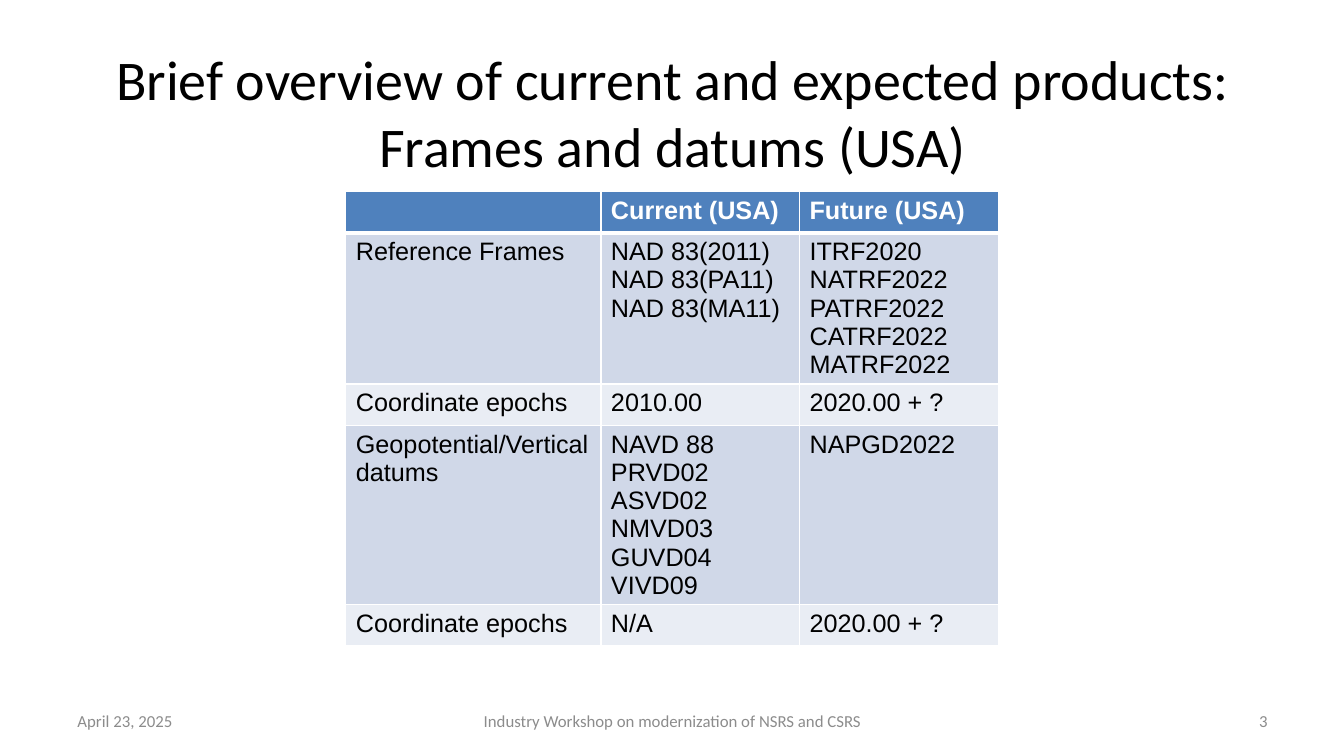
"""Build the slide on current and future reference frames and datums of the USA."""
import pptx
import pptx.dml.color
import pptx.enum.text
import pptx.oxml
import pptx.oxml.ns
import pptx.util
from pptx.util import Inches

ALIGN = pptx.enum.text.PP_ALIGN
MIDDLE = pptx.enum.text.MSO_ANCHOR.MIDDLE

TITLE = "Brief overview of current and expected products: Frames and datums (USA)"
PRODUCTS = [
    ("", "Current (USA)", "Future (USA)"),
    ("Reference Frames", "NAD 83(2011)\nNAD 83(PA11)\nNAD 83(MA11)",
     "ITRF2020\nNATRF2022\nPATRF2022\nCATRF2022\nMATRF2022"),
    ("Coordinate epochs", "2010.00", "2020.00 + ?"),
    ("Geopotential/Vertical datums",
     "NAVD 88\nPRVD02\nASVD02\nNMVD03\nGUVD04\nVIVD09", "NAPGD2022"),
    ("Coordinate epochs", "N/A", "2020.00 + ?"),
]
FOOTERS = [
    ("April 23, 2025", 0.67, 3.11, ALIGN.LEFT),
    ("Industry Workshop on modernization of NSRS and CSRS", 4.56, 4.22, ALIGN.CENTER),
    ("3", 9.56, 3.11, ALIGN.RIGHT),
]
COLUMN_WIDTHS = [2.53, 1.97, 1.97]
LINE_HEIGHT, CELL_MARGINS, MIN_ROW = 0.28, 0.1, 0.41
HEADER_FILL, BAND_FILLS = "4F81BD", ("E9EDF4", "D0D8E8")
TITLE_FONT = {"name": "Calibri", "size": 40, "color": "000000"}
FOOTER_FONT = {"name": "Calibri", "size": 12, "color": "8C8C8C"}
HEADER_FONT = {"name": "Arial", "size": 18, "bold": True, "color": "FFFFFF"}
BODY_FONT = {"name": "Arial", "size": 18, "bold": False, "color": "000000"}


def rgb(value):
    return pptx.dml.color.RGBColor.from_string(value)


def write(frame, text, style, align):
    frame.text = text
    for paragraph in frame.paragraphs:
        paragraph.alignment = align
        for key, value in style.items():
            if key == "color":
                paragraph.font.color.rgb = rgb(value)
            else:
                setattr(paragraph.font, key, pptx.util.Pt(value) if key == "size" else value)


def add_borders(cell, widths):
    properties = cell._tc.get_or_add_tcPr()
    for side, points in widths.items():
        properties.append(pptx.oxml.parse_xml(
            f'<a:ln{side} {pptx.oxml.ns.nsdecls("a")} w="{pptx.util.Pt(points)}">'
            f'<a:solidFill><a:srgbClr val="FFFFFF"/></a:solidFill></a:ln{side}>'))


def add_title(slide):
    title = slide.shapes.title
    title.left, title.top = Inches(0.67), Inches(0.48)
    title.width, title.height = Inches(12), Inches(1.25)
    title.text_frame.vertical_anchor = MIDDLE
    write(title.text_frame, TITLE, TITLE_FONT, ALIGN.CENTER)


def add_products(slide):
    heights = [max(MIN_ROW, CELL_MARGINS + LINE_HEIGHT * max(len(text.split("\n")) for text in row))
               for row in PRODUCTS]
    products = slide.shapes.add_table(
        len(PRODUCTS), len(COLUMN_WIDTHS), Inches(3.43), Inches(1.9),
        Inches(sum(COLUMN_WIDTHS)), Inches(sum(heights))).table
    for column, width in zip(products.columns, COLUMN_WIDTHS):
        column.width = Inches(width)
    for row_index, (texts, height) in enumerate(zip(PRODUCTS, heights)):
        products.rows[row_index].height = Inches(height)
        header = row_index == 0
        for column_index, text in enumerate(texts):
            cell = products.cell(row_index, column_index)
            write(cell.text_frame, text, HEADER_FONT if header else BODY_FONT, ALIGN.LEFT)
            add_borders(cell, {"L": 1, "R": 1, "T": 3 if row_index == 1 else 1,
                               "B": 3 if header else 1})
            cell.fill.solid()
            cell.fill.fore_color.rgb = rgb(HEADER_FILL if header else BAND_FILLS[row_index % 2])


def add_footers(slide):
    for text, left, width, align in FOOTERS:
        footer = slide.shapes.add_textbox(Inches(left), Inches(6.95), Inches(width), Inches(0.4))
        footer.text_frame.word_wrap = True
        footer.text_frame.vertical_anchor = MIDDLE
        write(footer.text_frame, text, FOOTER_FONT, align)


def main():
    deck = pptx.Presentation()
    deck.slide_width, deck.slide_height = Inches(13.33), Inches(7.5)
    slide = deck.slides.add_slide(deck.slide_layouts[5])
    add_title(slide)
    add_products(slide)
    add_footers(slide)
    deck.save("out.pptx")


if __name__ == "__main__":
    main()
